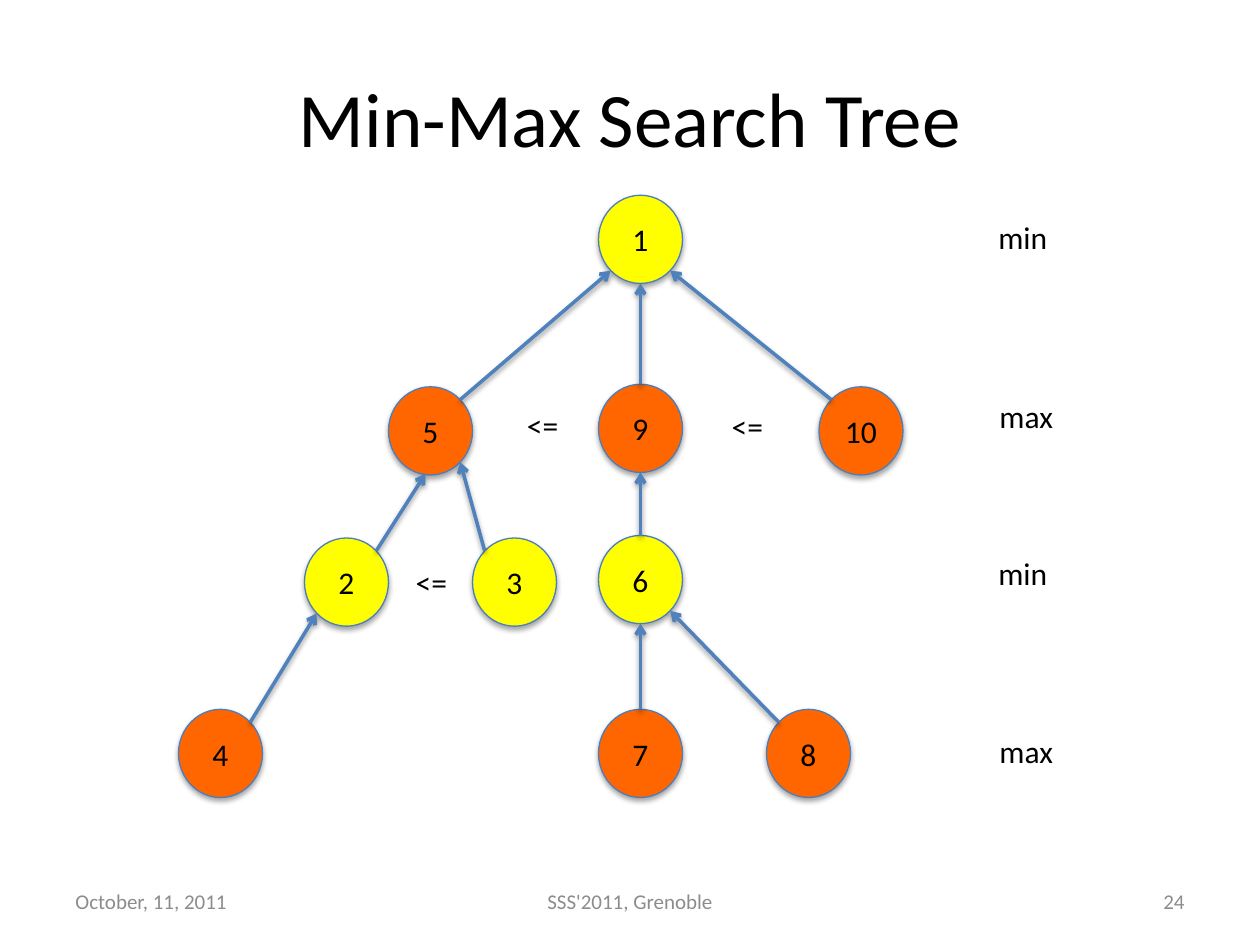
import pptx
import pptx.util
import pptx.dml.color
import pptx.enum.shapes
import pptx.enum.text
import pptx.oxml
import pptx.oxml.ns

theme = {
    "font": "Calibri", "ink": "000000", "grey": "8C8C8C",
    "min": "FFFF00", "max": "FF6600", "rim": "4B7EBC", "edge": "4F81BD",
    "head": 44, "text": 18, "foot": 12, "thin": 0.75, "thick": 2,
}
rgb = pptx.dml.color.RGBColor.from_string
pt = pptx.util.Pt
align = pptx.enum.text.PP_ALIGN
anchor = pptx.enum.text.MSO_ANCHOR

deck = pptx.Presentation()
deck.slide_width = pptx.util.Inches(10)
deck.slide_height = pptx.util.Inches(7.5)
col = deck.slide_width / 120
row = deck.slide_height / 150
slide = deck.slides.add_slide(deck.slide_layouts[5])


def write(shape, words, size, ink, side, mid=True, wrap=True):
    frame = shape.text_frame
    frame.word_wrap = wrap
    frame.vertical_anchor = anchor.MIDDLE if mid else anchor.TOP
    para = frame.paragraphs[0]
    para.alignment = side
    run = para.add_run()
    run.text = words
    run.font.name = theme["font"]
    run.font.size = pt(theme[size])
    run.font.color.rgb = rgb(theme[ink])


def shade(shape, alpha, dist):
    shape._element.spPr.append(pptx.oxml.parse_xml(
        f'<a:effectLst {pptx.oxml.ns.nsdecls("a")}>'
        f'<a:outerShdw blurRad="{pt(3.1)}" dist="{pt(dist)}" dir="5400000" rotWithShape="0">'
        f'<a:srgbClr val="000000"><a:alpha val="{alpha * 1000}"/></a:srgbClr>'
        '</a:outerShdw></a:effectLst>'))


title = slide.shapes.title
title.left, title.top = int(6 * col), int(6 * row)
title.width, title.height = int(108 * col), int(25 * row)
write(title, "Min-Max Search Tree", "head", "ink", align.CENTER)

for words, left, width, side in [
    ("October, 11, 2011", 6, 28, align.LEFT),
    ("SSS'2011, Grenoble", 41, 38, align.CENTER),
    ("24", 86, 28, align.RIGHT),
]:
    box = slide.shapes.add_textbox(int(left * col), int(139 * row), int(width * col), int(8 * row))
    write(box, words, "foot", "grey", side)

wide, high = 8, 14
nodes = {
    "1": (61, 38, "min"),
    "5": (41, 68.4, "max"), "9": (61, 68, "max"), "10": (82, 68.4, "max"),
    "2": (33, 92.4, "min"), "3": (49, 92.4, "min"), "6": (61, 92, "min"),
    "4": (21, 119.6, "max"), "7": (61, 119.6, "max"), "8": (77, 119.6, "max"),
}
for name, (x, y, kind) in nodes.items():
    node = slide.shapes.add_shape(
        pptx.enum.shapes.MSO_SHAPE.OVAL, int((x - wide / 2) * col), int((y - high / 2) * row),
        int(wide * col), int(high * row))
    node.fill.solid()
    node.fill.fore_color.rgb = rgb(theme[kind])
    node.line.color.rgb = rgb(theme["rim"])
    node.line.width = pt(theme["thin"])
    shade(node, 35, 1.8)
    write(node, name, "text", "ink", align.CENTER)

ports = {
    "top": (0, -1), "base": (0, 1), "near base": (-0.12, 0.97),
    "top left": (-0.71, -0.71), "top right": (0.71, -0.71),
    "base left": (-0.71, 0.71), "base right": (0.71, 0.71),
}
for child, start, parent, end in [
    ("5", "top right", "1", "base left"),
    ("9", "top", "1", "base"),
    ("10", "top left", "1", "base right"),
    ("2", "top right", "5", "near base"),
    ("3", "top left", "5", "base right"),
    ("6", "top", "9", "base"),
    ("4", "top right", "2", "base left"),
    ("7", "top", "6", "base"),
    ("8", "top left", "6", "base right"),
]:
    ends = []
    for name, port in [(child, start), (parent, end)]:
        x, y, kind = nodes[name]
        dx, dy = ports[port]
        ends += [int((x + dx * wide / 2) * col), int((y + dy * high / 2) * row)]
    edge = slide.shapes.add_connector(pptx.enum.shapes.MSO_CONNECTOR.STRAIGHT, *ends)
    edge.line.color.rgb = rgb(theme["edge"])
    edge.line.width = pt(theme["thick"])
    edge.line._get_or_add_ln().append(pptx.oxml.parse_xml(
        f'<a:tailEnd {pptx.oxml.ns.nsdecls("a")} type="arrow"/>'))
    shade(edge, 38, 1.6)

for words, left, top, width in [
    ("<=", 49, 63.4, 5.4), ("<=", 68.5, 63.6, 5.4), ("<=", 38.4, 88.4, 5.4),
    ("min", 93.9, 33.6, 7.7), ("max", 94, 62, 7.7),
    ("min", 93.9, 87, 7.7), ("max", 94, 115.2, 7.7),
]:
    box = slide.shapes.add_textbox(int(left * col), int(top * row), int(width * col), int(8 * row))
    write(box, words, "text", "ink", align.LEFT, mid=False, wrap=False)
    box.text_frame.auto_size = pptx.enum.text.MSO_AUTO_SIZE.SHAPE_TO_FIT_TEXT

deck.save("out.pptx")
